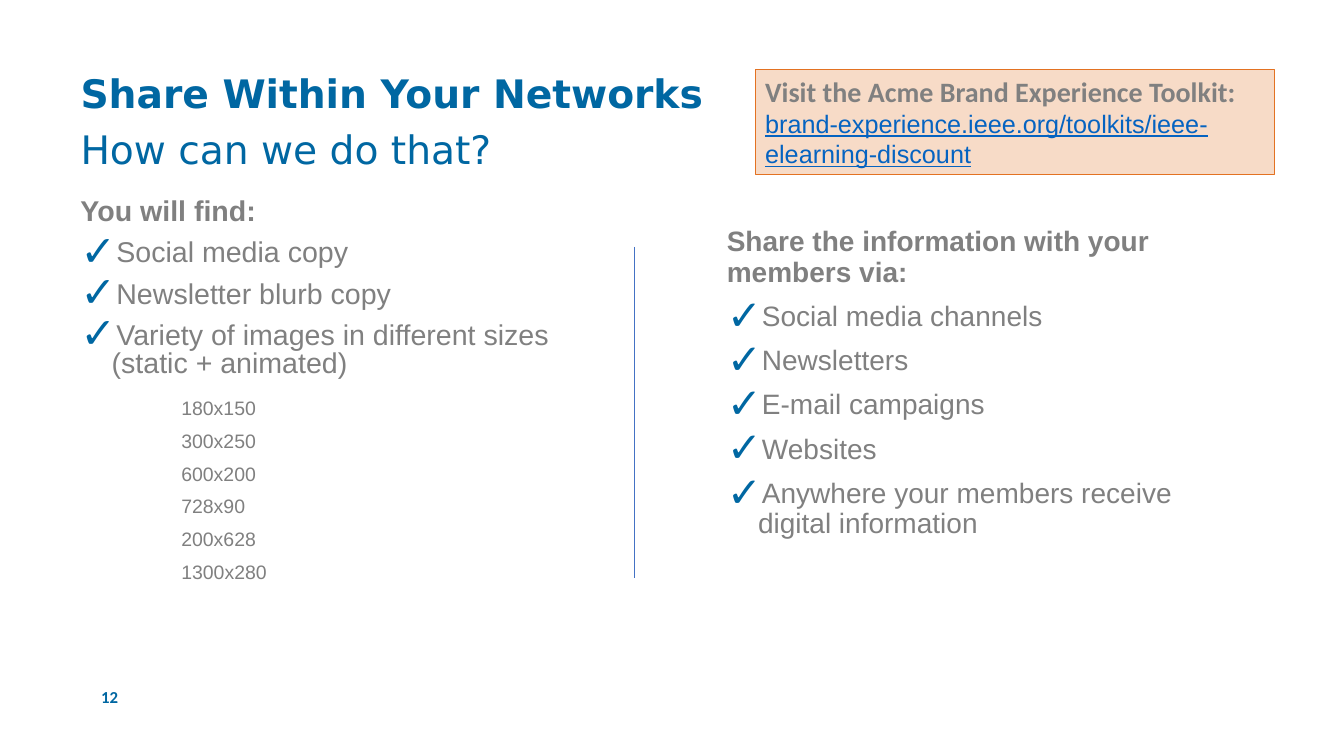
from lxml import etree
from pptx import Presentation
from pptx.dml.color import RGBColor
from pptx.enum import shapes, text
from pptx.oxml import ns
from pptx.util import Inches, Pt

BLUE = RGBColor(0x00, 0x67, 0xA2)
GREY = RGBColor(0x80, 0x80, 0x80)
ORANGE = RGBColor(0xE3, 0x72, 0x22)
LINK = RGBColor(0x05, 0x63, 0xC1)
RULE = RGBColor(0x44, 0x72, 0xC4)


def add_child(parent, tag, **attrs):
    return etree.SubElement(parent, ns.qn(tag), attrs)


def add_box(s, x, y, w, h):
    tf = s.shapes.add_textbox(Inches(x), Inches(y), Inches(w), Inches(h)).text_frame
    tf.word_wrap = True
    return tf


def add_line(tf, words, size, color=GREY, bold=False, font="Arial",
             spacing=None, before=0, left=0, check=False):
    """Write the next paragraph; the first one has no space before."""
    first = not tf.text
    p = tf.paragraphs[0] if first else tf.add_paragraph()
    p.text = words
    if spacing:
        p.line_spacing = spacing
    p.space_before = Pt(0 if first else before)
    if left:
        pPr = p._p.get_or_add_pPr()
        pPr.set("marL", str(Inches(left)))
        pPr.set("indent", str(-Inches(left) if check else 0))
    if check:
        add_child(add_child(pPr, "a:buClr"), "a:srgbClr", val=str(BLUE))
        add_child(pPr, "a:buSzPct", val="150000")
        add_child(pPr, "a:buFont", typeface="Arial")
        add_child(pPr, "a:buChar", char="✓")
    f = p.runs[0].font
    f.name, f.size, f.bold = font, Pt(size), bold
    f.color.rgb = color
    return p


def add_checklist(tf, heading, items, size, spacing):
    add_line(tf, heading, size, bold=True, spacing=spacing)
    for item in items:
        add_line(tf, item, size, spacing=spacing, before=10, left=0.31, check=True)


def add_callout(s, heading, address):
    sp = s.shapes.add_shape(shapes.MSO_SHAPE.RECTANGLE, Inches(7.49), Inches(0.69),
                            Inches(5.15), Inches(1.04))
    sp.shadow.inherit = False
    sp.fill.solid()
    sp.fill.fore_color.rgb = ORANGE
    color = sp._element.spPr.find(ns.qn("a:solidFill"))[0]
    add_child(color, "a:alpha", val="25000")
    sp.line.color.rgb = ORANGE
    sp.line.width = Pt(1)
    tf = sp.text_frame
    tf.word_wrap = True
    tf.vertical_anchor = text.MSO_ANCHOR.TOP
    lines = [add_line(tf, heading, 20, bold=True, font="Calibri"),
             add_line(tf, address, 18, LINK)]
    for p in lines:
        p.alignment = text.PP_ALIGN.LEFT
    lines[1].runs[0].font.underline = True


def add_divider(s, x, top, bottom):
    line = s.shapes.add_connector(shapes.MSO_CONNECTOR.STRAIGHT, Inches(x),
                                  Inches(top), Inches(x), Inches(bottom))
    line.line.color.rgb = RULE
    line.line.width = Pt(0.5)
    add_child(line._element.spPr, "a:effectLst")


def main():
    prs = Presentation()
    prs.slide_width, prs.slide_height = Inches(13.33), Inches(7.5)
    s = prs.slides.add_slide(prs.slide_layouts[6])

    # Slide number
    tf = add_box(s, 0.41, 6.66, 0.86, 0.5)
    tf.vertical_anchor = text.MSO_ANCHOR.MIDDLE
    add_line(tf, "12", 12, BLUE, True, "Calibri").alignment = text.PP_ALIGN.RIGHT

    # Title and subtitle
    tf = add_box(s, 0.7, 0.69, 12.21, 1.36)
    for words, bold in (("Share Within Your Networks", True),
                        ("How can we do that?", False)):
        add_line(tf, words, 28, BLUE, bold, "DejaVu Sans", 0.9, 10)

    # Left column: contents and image sizes
    tf = add_box(s, 0.7, 1.93, 5.27, 4.06)
    add_checklist(tf, "You will find:",
                  ["Social media copy", "Newsletter blurb copy",
                   "Variety of images in different sizes (static + animated)"], 20.4, 0.8)
    sizes = ["180x150", "300x250", "600x200", "728x90", "200x628", "1300x280"]
    for i, size in enumerate(sizes):
        add_line(tf, size, 13.9, spacing=0.8, before=10 if i else 16, left=1)

    # Toolkit callout
    add_callout(s, "Visit the Acme Brand Experience Toolkit:",
                "brand-experience.ieee.org/toolkits/ieee-elearning-discount")

    # Right column: channels
    tf = add_box(s, 7.11, 2.21, 4.91, 4.06)
    add_checklist(tf, "Share the information with your members via:",
                  ["Social media channels", "Newsletters", "E-mail campaigns", "Websites",
                   "Anywhere your members receive digital information"], 20, 0.9)

    # Column divider
    add_divider(s, 6.29, 2.45, 5.73)

    prs.save("out.pptx")


if __name__ == "__main__":
    main()
